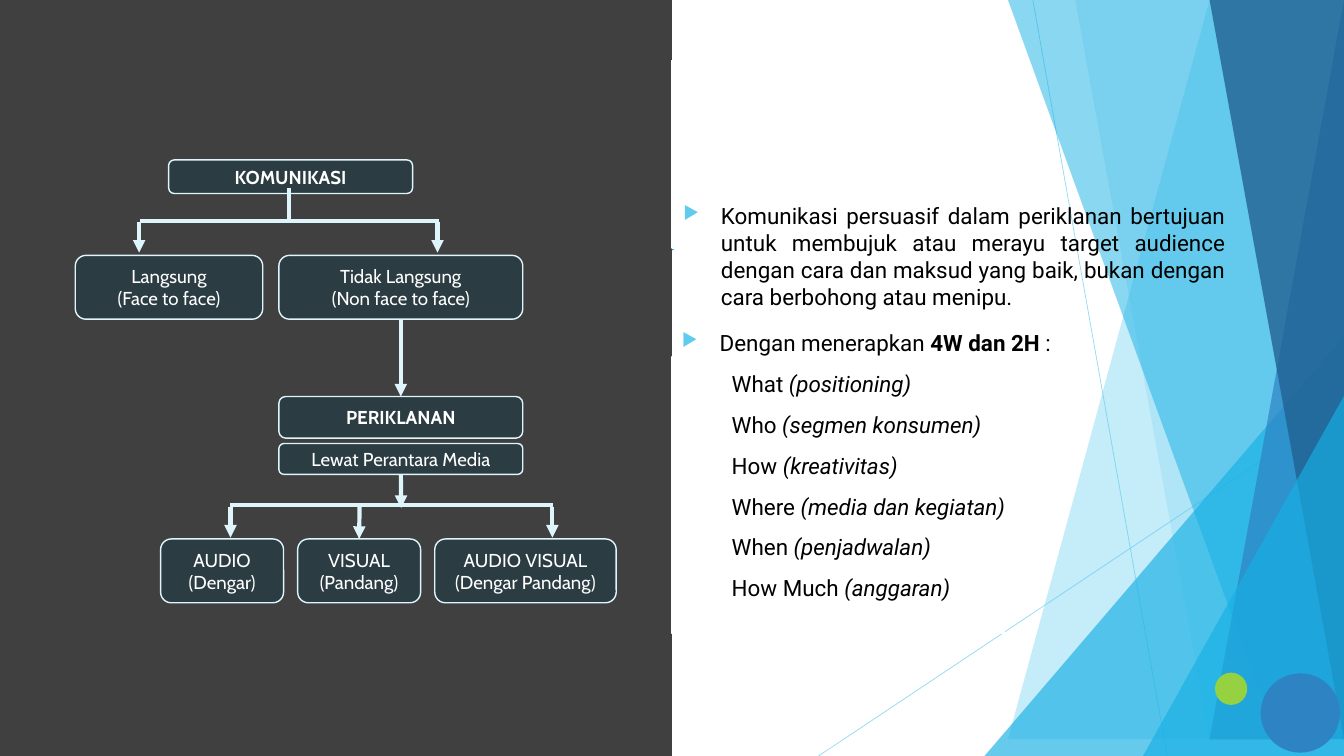
import math
from dataclasses import dataclass

from pptx import Presentation
from pptx import util as u
from pptx.dml.color import RGBColor
from pptx.enum import shapes, text
from pptx.oxml.ns import qn
from lxml import etree


@dataclass(frozen=True)
class Theme:
    """Colours, fonts and type sizes of the slide."""
    sky: str = "5FCBEF"
    cyan: str = "17B0E4"
    blue: str = "2E83C3"
    navy: str = "226292"
    lime: str = "96D141"
    green: str = "2E946B"
    panel: str = "404040"
    box: str = "2C3C43"
    pale: str = "DFF5FC"
    white: str = "FFFFFF"
    black: str = "000000"
    box_font: str = "Cabin"
    body_font: str = "Roboto"
    box_size: int = 20
    body_size: int = 24


class Canvas:
    """Draws styled elements on one slide."""

    def __init__(self, slide, theme):
        self.slide = slide
        self.theme = theme

    def paint(self, fill, color, alpha=100):
        fill.solid()
        fill.fore_color.rgb = RGBColor.from_string(color)
        if alpha < 100:
            tone = next(fill._xPr.iter(qn("a:srgbClr")))
            etree.SubElement(tone, qn("a:alpha"), val=str(alpha * 1000))

    def finish(self, shape, color, alpha=100, border=None):
        shape.shadow.inherit = False
        self.paint(shape.fill, color, alpha)
        if border:
            self.paint(shape.line.fill, border)
            shape.line.width = u.Pt(1.5)
        else:
            shape.line.fill.background()
        return shape

    def preset(self, kind, at, color, alpha=100, border=None):
        shape = self.slide.shapes.add_shape(kind, *map(u.Inches, at))
        return self.finish(shape, color, alpha, border)

    def outline(self, points, color, alpha=100):
        builder = self.slide.shapes.build_freeform(*points[0], scale=u.Inches(1))
        builder.add_line_segments(points[1:], close=True)
        return self.finish(builder.convert_to_shape(), color, alpha)

    def format(self, paragraph, font, size, color, bold=None):
        paragraph.font.name = font
        paragraph.font.size = u.Pt(size)
        paragraph.font.color.rgb = RGBColor.from_string(color)
        paragraph.font.bold = bold

    def box(self, at, *lines, bold=None):
        t = self.theme
        shape = self.preset(shapes.MSO_SHAPE.ROUNDED_RECTANGLE, at, t.box, border=t.pale)
        frame = shape.text_frame
        frame.vertical_anchor = text.MSO_ANCHOR.MIDDLE
        frame.text = "\n".join(lines)
        for paragraph in frame.paragraphs:
            paragraph.alignment = text.PP_ALIGN.CENTER
            self.format(paragraph, t.box_font, t.box_size, t.white, bold)
        return shape

    def line(self, start, end, color, width, alpha=100, arrow=False, source=None, target=None):
        link = self.slide.shapes.add_connector(
            shapes.MSO_CONNECTOR.STRAIGHT, *map(u.Inches, (*start, *end)))
        self.paint(link.line.fill, color, alpha)
        link.line.width = u.Pt(width)
        if arrow:
            etree.SubElement(link.line._get_or_add_ln(), qn("a:tailEnd"), type="triangle")
        etree.SubElement(link._element.spPr, qn("a:effectLst"))
        if source:
            link.begin_connect(source, 2)
        if target:
            link.end_connect(target, 0)

    def branch(self, start, end, arrow=True, source=None, target=None):
        self.line(start, end, self.theme.pale, 4.5, arrow=arrow, source=source, target=target)

    def body(self, at, paragraphs):
        t = self.theme
        frame = self.slide.shapes.add_textbox(*map(u.Inches, at)).text_frame
        frame.word_wrap = True
        for index, (bulleted, runs) in enumerate(paragraphs):
            paragraph = frame.paragraphs[0] if index == 0 else frame.add_paragraph()
            props = paragraph._p.get_or_add_pPr()
            margin = 0.56 if bulleted else 0.74
            props.set("marL", str(u.Inches(margin)))
            props.set("indent", str(-u.Inches(margin) if bulleted else 0))
            if bulleted:
                tone = etree.SubElement(props, qn("a:buClr"))
                etree.SubElement(tone, qn("a:srgbClr"), val=t.sky)
                etree.SubElement(props, qn("a:buSzPct"), val="80000")
                etree.SubElement(props, qn("a:buChar"), char="▶")
            paragraph.alignment = text.PP_ALIGN.JUSTIFY
            paragraph.space_before = u.Pt(15)
            self.format(paragraph, t.body_font, t.body_size, t.black)
            for words, emphasis in runs:
                run = paragraph.add_run()
                run.text = words
                if emphasis:
                    setattr(run.font, emphasis, True)


def draw_backdrop(canvas):
    """Draw the facets, circles and dark panel behind the content."""
    t, preset = canvas.theme, shapes.MSO_SHAPE
    right, bottom = 20, 11.25
    canvas.line((15.37, 0), (17.37, bottom), t.sky, 0.75, 70)
    canvas.line((right, 6.04), (12.18, bottom), t.sky, 0.75, 70)

    def facet(top_x, bottom_x, color, alpha):
        canvas.outline([(top_x, 0), (right, 0), (right, bottom), (bottom_x, bottom)], color, alpha)

    def corner(left, top):
        at = (left, top, right - left, bottom - top)
        canvas.preset(preset.ISOSCELES_TRIANGLE, at, t.cyan, 66).adjustments[0] = 1

    facet(18.42, 15.06, t.sky, 36)
    facet(15.75, 17.74, t.sky, 20)
    corner(14.65, 5)
    facet(15.31, 19.36, t.cyan, 50)
    facet(19.55, 17.88, t.blue, 70)
    facet(17.94, 19.76, t.navy, 80)
    corner(17.01, 5.89)
    canvas.preset(preset.OVAL, (18.08, 10.01, 0.48, 0.48), t.lime)
    canvas.preset(preset.OVAL, (18.76, 10.02, 1.18, 1.18), t.blue)
    arc = [math.radians(143 + 254 * step / 60) for step in range(61)]
    canvas.outline([(18.21 + 0.4 * math.cos(a), 11.01 + 0.4 * math.sin(a)) for a in arc], t.green)
    canvas.preset(preset.RECTANGLE, (0, 0, 10, bottom), t.panel)
    canvas.preset(preset.RIGHT_TRIANGLE, (10.08, 3.34, 0.31, 0.47), t.cyan).rotation = 90


def draw_diagram(canvas):
    """Draw the communication tree."""
    canvas.box((2.51, 2.38, 3.63, 0.5), "KOMUNIKASI", bold=True)
    canvas.box((1.12, 3.8, 2.79, 0.95), "Langsung", "(Face to face)")
    indirect = canvas.box((4.15, 3.8, 3.63, 0.95), "Tidak Langsung", "(Non face to face)")
    advertising = canvas.box((4.15, 5.9, 3.63, 0.62), "PERIKLANAN", bold=True)
    canvas.box((2.39, 8.02, 1.83, 0.95), "AUDIO", "(Dengar)")
    visual = canvas.box((4.43, 8.02, 1.83, 0.95), "VISUAL", "(Pandang)")
    canvas.box((6.47, 8.02, 2.7, 0.95), "AUDIO VISUAL", "(Dengar Pandang)")
    media = canvas.box((4.15, 6.6, 3.63, 0.46), "Lewat Perantara Media")

    canvas.branch((5.97, 7.06), (5.97, 7.56), source=media)
    for x, target in ((3.43, None), (5.35, visual), (8.22, None)):
        canvas.branch((x, 7.54), (x, 8), target=target)
    canvas.branch((3.43, 7.52), (8.23, 7.52), arrow=False)
    canvas.branch((2.09, 3.29), (6.53, 3.29), arrow=False)
    for x in (6.51, 2.07):
        canvas.branch((x, 3.3), (x, 3.76))
    canvas.branch((4.3, 3.29), (4.3, 2.8), arrow=False)
    canvas.branch((5.97, 4.75), (5.97, 5.9), source=indirect, target=advertising)


def draw_explanation(canvas):
    """Write the explanation over its white patches."""
    white, patch = canvas.theme.white, shapes.MSO_SHAPE.RECTANGLE
    questions = [
        ("What", "positioning"), ("Who", "segmen konsumen"), ("How", "kreativitas"),
        ("Where", "media dan kegiatan"), ("When", "penjadwalan"), ("How Much", "anggaran"),
    ]
    intro = [("Dengan menerapkan ", None), ("4W dan 2H ", "bold"), (":", None)]
    canvas.preset(patch, (10, 5.31, 4.95, 4.12), white, border=white)
    canvas.body((10.05, 4.85, 8.26, 5.34), [(True, intro)] + [
        (False, [(f"{question} ", None), (f"({topic})", "italic")])
        for question, topic in questions])
    canvas.preset(patch, (10, 0.9, 4.44, 2.79), white, border=white)
    canvas.body((10.07, 2.96, 8.26, 5.34), [(True, [(
        "Komunikasi persuasif dalam periklanan bertujuan untuk membujuk atau merayu "
        "target audience dengan cara dan maksud yang baik, bukan dengan cara berbohong "
        "atau menipu.", None)])])


def main():
    """Build and save the slide."""
    deck = Presentation()
    deck.slide_width, deck.slide_height = u.Inches(20), u.Inches(11.25)
    canvas = Canvas(deck.slides.add_slide(deck.slide_layouts[6]), Theme())
    draw_backdrop(canvas)
    draw_diagram(canvas)
    draw_explanation(canvas)
    deck.save("out.pptx")


if __name__ == "__main__":
    main()
